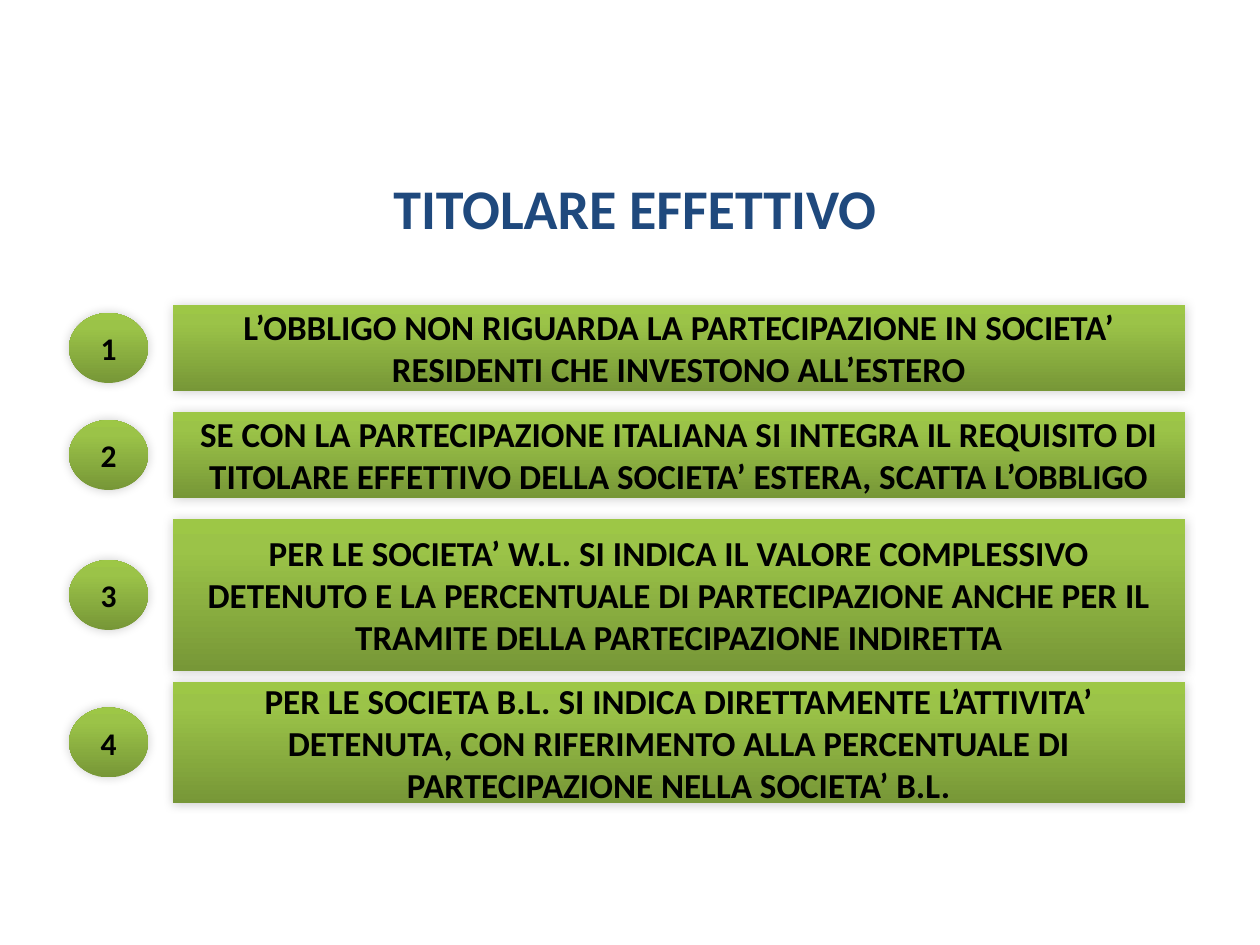
from copy import deepcopy

from lxml import etree
from pptx import Presentation
from pptx.dml.color import RGBColor
from pptx.enum.shapes import MSO_SHAPE
from pptx.enum.text import MSO_ANCHOR, PP_ALIGN
from pptx.oxml.ns import qn
from pptx.util import Emu, Pt

TITLE = "TITOLARE EFFETTIVO"
# text, top and height of each bar in px
RULES = [
    ("L’OBBLIGO NON RIGUARDA LA PARTECIPAZIONE IN SOCIETA’ RESIDENTI "
     "CHE INVESTONO ALL’ESTERO", 305, 86),
    ("SE CON LA PARTECIPAZIONE ITALIANA SI INTEGRA IL REQUISITO DI "
     "TITOLARE EFFETTIVO DELLA SOCIETA’ ESTERA, SCATTA L’OBBLIGO", 412, 86),
    ("PER LE SOCIETA’ W.L. SI INDICA IL VALORE COMPLESSIVO DETENUTO E LA "
     "PERCENTUALE DI PARTECIPAZIONE ANCHE PER IL TRAMITE DELLA "
     "PARTECIPAZIONE INDIRETTA", 519, 152),
    ("PER LE SOCIETA B.L. SI INDICA DIRETTAMENTE L’ATTIVITA’ DETENUTA, CON "
     "RIFERIMENTO ALLA PERCENTUALE DI PARTECIPAZIONE NELLA SOCIETA’ B.L.",
     682, 121),
]

PX = 914400 // 126
SLIDE_W, SLIDE_H = 1260, 945
BAR_LEFT, BAR_W = 173, 1012
BADGE_LEFT, BADGE_W, BADGE_H = 69, 79, 70

FONT = "Calibri"
NAVY = RGBColor(0x1F, 0x49, 0x7D)
BLACK = RGBColor(0, 0, 0)
GREENS = [
    (0, RGBColor(0x77, 0x97, 0x37)),
    (0.8, RGBColor(0x9B, 0xC3, 0x48)),
    (1, RGBColor(0x9D, 0xC7, 0x46)),
]
RECTANGLE, OVAL = MSO_SHAPE.RECTANGLE, MSO_SHAPE.OVAL
CENTER, MIDDLE = PP_ALIGN.CENTER, MSO_ANCHOR.MIDDLE


def px(*lengths):
    return [Emu(round(length * PX)) for length in lengths]


def write(shape, text, size, color):
    frame = shape.text_frame
    frame.text = text
    frame.word_wrap = True
    frame.vertical_anchor = MIDDLE
    paragraph = frame.paragraphs[0]
    paragraph.alignment = CENTER
    font = paragraph.font
    font.name, font.size, font.bold = FONT, Pt(size), True
    font.color.rgb = color


def fill_green(shape):
    """Three-stop gradient, dark at the bottom."""
    shape.fill.gradient()
    shape.fill.gradient_angle = 90
    stop_list = shape.element.spPr.find(".//" + qn("a:gsLst"))
    stop_list.append(deepcopy(stop_list[-1]))
    for stop, (position, color) in zip(shape.fill.gradient_stops, GREENS):
        stop.position = position
        stop.color.rgb = color


def add_soft_shadow(shape):
    shape.shadow.inherit = False
    effects = shape.element.spPr.find(qn("a:effectLst"))
    shadow = etree.SubElement(effects, qn("a:outerShdw"), blurRad=str(Pt(6)),
                              dist="0", dir="13500000", rotWithShape="0")
    color = etree.SubElement(shadow, qn("a:srgbClr"), val=str(BLACK))
    etree.SubElement(color, qn("a:alpha"), val="20000")


def add_green_shape(slide, kind, box, text, size):
    shape = slide.shapes.add_shape(kind, *px(*box))
    fill_green(shape)
    shape.line.fill.background()
    add_soft_shadow(shape)
    write(shape, text, size, BLACK)


def main():
    prs = Presentation()
    prs.slide_width, prs.slide_height = px(SLIDE_W, SLIDE_H)
    slide = prs.slides.add_slide(prs.slide_layouts[5])

    title = slide.shapes.title
    title.left, title.top, title.width, title.height = px(5, 169, SLIDE_W, 76)
    write(title, TITLE, 32, NAVY)

    for number, (rule, top, height) in enumerate(RULES, 1):
        badge_top = top + (height - BADGE_H) / 2
        add_green_shape(slide, OVAL, (BADGE_LEFT, badge_top, BADGE_W, BADGE_H),
                        str(number), 18)
        add_green_shape(slide, RECTANGLE, (BAR_LEFT, top, BAR_W, height), rule, 20)

    prs.save("out.pptx")


if __name__ == "__main__":
    main()
